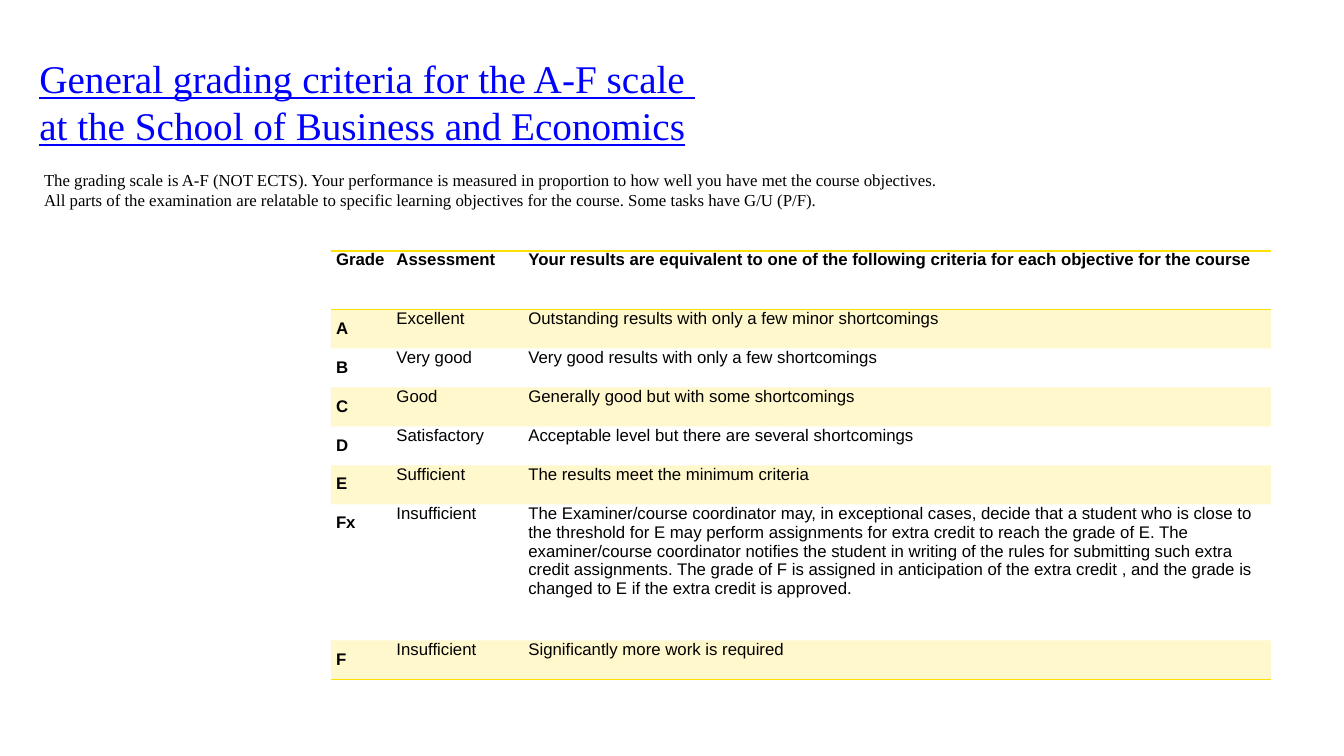
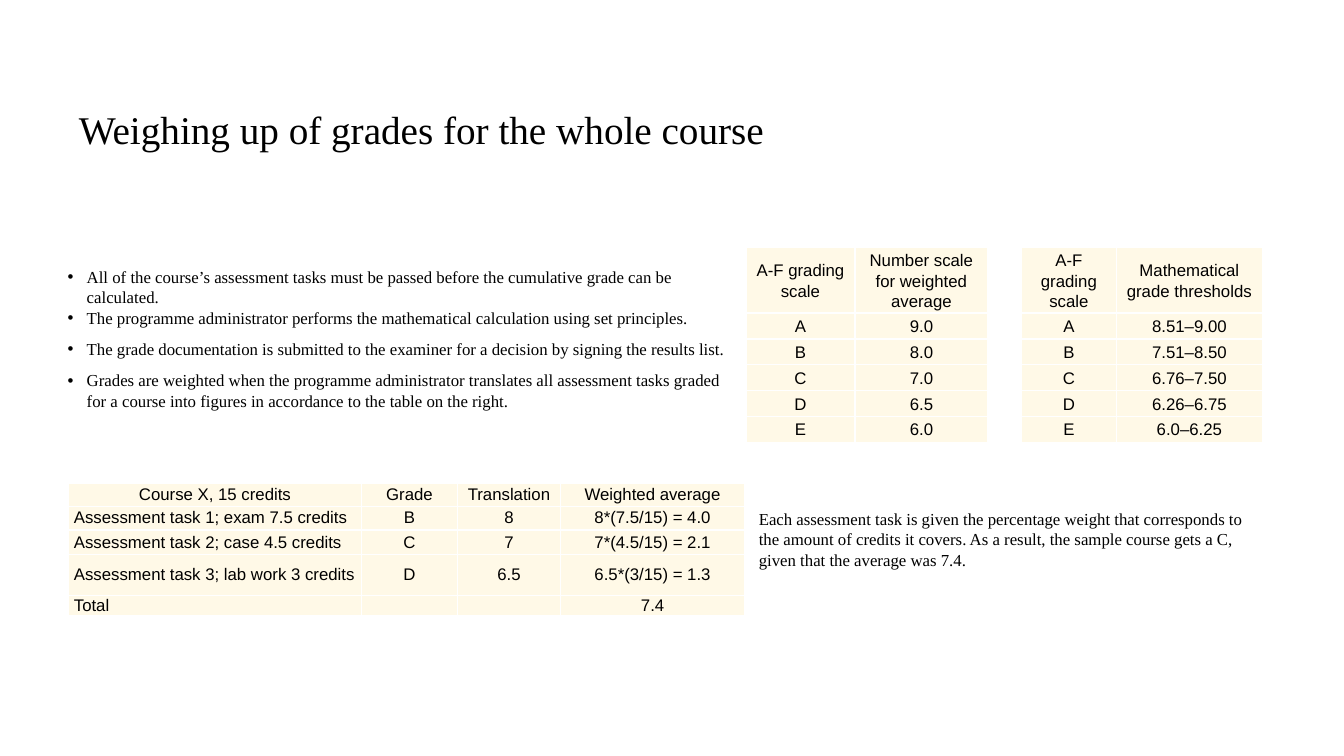
import pptx
import pptx.dml.color
import pptx.enum.text
import pptx.oxml
import pptx.oxml.ns
import pptx.util
from lxml import etree

COLORS = {"black": "000000", "link": "0000FF", "white": "FFFFFF", "yellow": "FFE000", "cream": "FFF9E7"}
SERIF, SANS = "Times New Roman", "Arial"
COLUMNS, ROWS = 160, 90
PLAIN_TABLE = "{2D5ABB26-0587-4C30-8999-92F81FD0307C}"
ALIGN = pptx.enum.text.PP_ALIGN
ANCHOR = pptx.enum.text.MSO_ANCHOR


def rgb(name):
    """Return the named colour."""
    return pptx.dml.color.RGBColor.from_string(COLORS[name])


def add_element(parent, tag, **attributes):
    """Append a drawing element to a parent."""
    return etree.SubElement(parent, pptx.oxml.ns.qn(tag), attributes)


def write_text(frame, texts, font=SERIF, size=12, color="black", bold=False, underline=False,
               align=ALIGN.LEFT, line_spacing=None, gaps=(), bullet=None):
    """Fill a text frame with one paragraph for each text."""
    for index, text in enumerate(texts):
        paragraph = frame.add_paragraph() if index else frame.paragraphs[0]
        paragraph.alignment = align
        if bullet:
            properties = paragraph._p.get_or_add_pPr()
            indent = pptx.util.Inches(0.19)
            properties.set("marL", str(indent))
            properties.set("indent", str(-indent))
            add_element(properties, "a:buFont", typeface=SANS)
            add_element(properties, "a:buChar", char=bullet)
        if line_spacing:
            paragraph.line_spacing = line_spacing
        if index and gaps:
            paragraph.space_before = pptx.util.Pt(gaps[index - 1])
        if not text:
            add_element(paragraph._p, "a:endParaRPr", sz=str(size * 100))
            continue
        paragraph.text = text
        for run in paragraph.runs:
            run.font.name = font
            run.font.size = pptx.util.Pt(size)
            run.font.bold = bold
            run.font.underline = underline
            run.font.color.rgb = rgb(color)


class Deck:
    """Hold the presentation, its grid and the current slide."""

    def __init__(self):
        """Start an empty wide presentation."""
        self.presentation = pptx.Presentation()
        self.presentation.slide_width = pptx.util.Inches(13.33)
        self.presentation.slide_height = pptx.util.Inches(7.5)
        self.slide = None

    def across(self, columns):
        """Turn grid columns into a length."""
        return round(self.presentation.slide_width * columns / COLUMNS)

    def down(self, rows):
        """Turn grid rows into a length."""
        return round(self.presentation.slide_height * rows / ROWS)

    def add_slide(self):
        """Make a new blank slide the current one."""
        self.slide = self.presentation.slides.add_slide(self.presentation.slide_layouts[6])

    def add_text(self, left, top, width, height, *texts, anchor=ANCHOR.TOP, inset=(0.07, 0.04), **style):
        """Add a wrapping text box."""
        shape = self.slide.shapes.add_textbox(
            self.across(left), self.down(top), self.across(width), self.down(height))
        frame = shape.text_frame
        frame.word_wrap = True
        frame.vertical_anchor = anchor
        frame.margin_left = frame.margin_right = pptx.util.Inches(inset[0])
        frame.margin_top = frame.margin_bottom = pptx.util.Inches(inset[1])
        write_text(frame, texts, **style)

    def add_title(self, left, top, width, height, text, **style):
        """Add a slide title."""
        self.add_text(left, top, width, height, text, size=28, inset=(0.1, 0.05), **style)

    def add_table(self, left, top, widths, heights, content, cell_style):
        """Add a table whose cells are formatted by a function of row and column."""
        shape = self.slide.shapes.add_table(
            len(heights), len(widths), self.across(left), self.down(top),
            self.across(sum(widths)), self.down(sum(heights)))
        table = shape.table
        table.first_row = table.horz_banding = False
        table._tbl.tblPr.find(pptx.oxml.ns.qn("a:tableStyleId")).text = PLAIN_TABLE
        for column, width in zip(table.columns, widths):
            column.width = self.across(width)
        for row, height in zip(table.rows, heights):
            row.height = self.down(height)
        for row_index, texts in enumerate(content):
            for column_index, text in enumerate(texts):
                cell = table.cell(row_index, column_index)
                self.format_cell(cell, text, **cell_style(row_index, column_index))

    def format_cell(self, cell, text, fill=None, alpha=100, edges=None, edge_color="white",
                    anchor=ANCHOR.TOP, **style):
        """Give a cell its borders, fill and text."""
        cell.margin_left = cell.margin_right = pptx.util.Inches(0.05)
        cell.margin_top = cell.margin_bottom = 0
        cell.vertical_anchor = anchor
        properties = cell._tc.get_or_add_tcPr()
        for edge, points in (edges or {}).items():
            line = add_element(properties, "a:ln" + edge, w=str(pptx.util.Pt(points)))
            add_element(add_element(line, "a:solidFill"), "a:srgbClr", val=COLORS[edge_color])
        if fill:
            cell.fill.solid()
            cell.fill.fore_color.rgb = rgb(fill)
            if alpha < 100:
                color = properties.find(pptx.oxml.ns.qn("a:solidFill"))[0]
                add_element(color, "a:alpha", val=str(alpha * 1000))
        else:
            cell.fill.background()
        write_text(cell.text_frame, [text], font=SANS, **style)


CRITERIA = [
    ("Grade", "Assessment", "Your results are equivalent to one of the following criteria for each objective for the course"),
    ("A", "Excellent", "Outstanding results with only a few minor shortcomings"),
    ("B", "Very good", "Very good results with only a few shortcomings"),
    ("C", "Good", "Generally good but with some shortcomings"),
    ("D", "Satisfactory", "Acceptable level but there are several shortcomings"),
    ("E", "Sufficient", "The results meet the minimum criteria"),
    ("Fx", "Insufficient",
     "The Examiner/course coordinator may, in exceptional cases, decide that a student who is close to the "
     "threshold for E may perform assignments for extra credit to reach the grade of E. The examiner/course "
     "coordinator notifies the student in writing of the rules for submitting such extra credit assignments. "
     "The grade of F is assigned in anticipation of the extra credit , and the grade is changed to E if the "
     "extra credit is approved."),
    ("F", "Insufficient", "Significantly more work is required"),
]
GRADES = "ABCDE"
NUMBERS = ["9.0", "8.0", "7.0", "6.5", "6.0"]
THRESHOLDS = ["8.51–9.00", "7.51–8.50", "6.76–7.50", "6.26–6.75", "6.0–6.25"]
SAMPLE_COURSE = [
    ("Course X, 15 credits", "Grade", "Translation", "Weighted average"),
    ("Assessment task 1; exam 7.5 credits", "B", "8", "8*(7.5/15) = 4.0"),
    ("Assessment task 2; case 4.5 credits", "C", "7", "7*(4.5/15) = 2.1"),
    ("Assessment task 3; lab work 3 credits", "D", "6.5", "6.5*(3/15) = 1.3"),
    ("Total", "", "", "7.4"),
]


def criteria_style(row, column):
    """Format the criteria table: bold heads, tinted odd rows, yellow rules."""
    style = {"bold": row == 0 or column == 0, "edge_color": "yellow"}
    if row == 0:
        style.update(edges={"T": 1.5, "B": 0.75}, line_spacing=pptx.util.Pt(13))
    elif column == 0:
        style.update(line_spacing=1.5)
    if row == len(CRITERIA) - 1:
        style.update(edges={"B": 0.75})
    if row % 2:
        style.update(fill="yellow", alpha=20)
    return style


def course_style(row, column):
    """Format the sample course table: cream cells, task names to the left."""
    align = ALIGN.LEFT if row and not column else ALIGN.CENTER
    return {"fill": "cream", "edges": dict.fromkeys("LRTB", 1), "anchor": ANCHOR.MIDDLE, "align": align}


def scale_style(row, column):
    """Format a scale table: centred cream cells with open lines."""
    return {**course_style(0, column), "line_spacing": 1.08}


def add_criteria_slide(deck):
    """Build the slide with the grading criteria."""
    deck.add_slide()
    deck.add_title(3.5, 5.9, 149.3, 4.9,
                   "General grading criteria for the A-F scale \vat the School of Business and Economics",
                   color="link", underline=True)
    deck.add_text(4.4, 19.75, 110.8, 11.3,
                  "The grading scale is A-F (NOT ECTS). Your performance is measured in proportion to how well "
                  "you have met the course objectives. All parts of the examination are relatable to specific "
                  "learning objectives for the course. Some tasks have G/U (P/F).")
    deck.add_table(39.4, 29.84, [7.2, 15.7, 89], [7] + [4.64] * 5 + [16.2, 4.64], CRITERIA, criteria_style)


def add_weighing_slide(deck):
    """Build the slide about weighing grades."""
    deck.add_slide()
    deck.add_title(8.2, 11.9, 100.3, 7.4, "Weighing up of grades for the whole course")
    scales = [
        (121.6, [11.3, 17.4], "Mathematical grade thresholds", THRESHOLDS),
        (88.8, [13, 15.8], "Number scale for weighted average", NUMBERS),
    ]
    for left, widths, heading, values in scales:
        content = [("A-F grading scale", heading), *zip(GRADES, values)]
        deck.add_table(left, 29.5, widths, [7.7] + [3.08] * len(values), content, scale_style)
    deck.add_text(7.2, 31.2, 81.7, 18.2,
                  "All of the course’s assessment tasks must be passed before the cumulative grade can be calculated.",
                  "The programme administrator performs the mathematical calculation using set principles.",
                  "The grade documentation is submitted to the examiner for a decision by signing the results list.",
                  "Grades are weighted when the programme administrator translates all assessment tasks graded "
                  "for a course into figures in accordance to the table on the right.",
                  anchor=ANCHOR.MIDDLE, bullet="•", gaps=(0.5, 8, 8))
    deck.add_table(8.2, 57.5, [34.8, 11.5, 12.2, 22], [2.75, 2.85, 2.9, 4.9, 2.3], SAMPLE_COURSE, course_style)
    deck.add_text(89.5, 60.1, 60.8, 8.2,
                  "Each assessment task is given the percentage weight that corresponds to the amount of credits "
                  "it covers. As a result, the sample course gets a C, given that the average was 7.4.",
                  anchor=ANCHOR.MIDDLE)


def main():
    """Build and save the presentation."""
    deck = Deck()
    add_criteria_slide(deck)
    add_weighing_slide(deck)
    deck.presentation.save("out.pptx")


if __name__ == "__main__":
    main()
